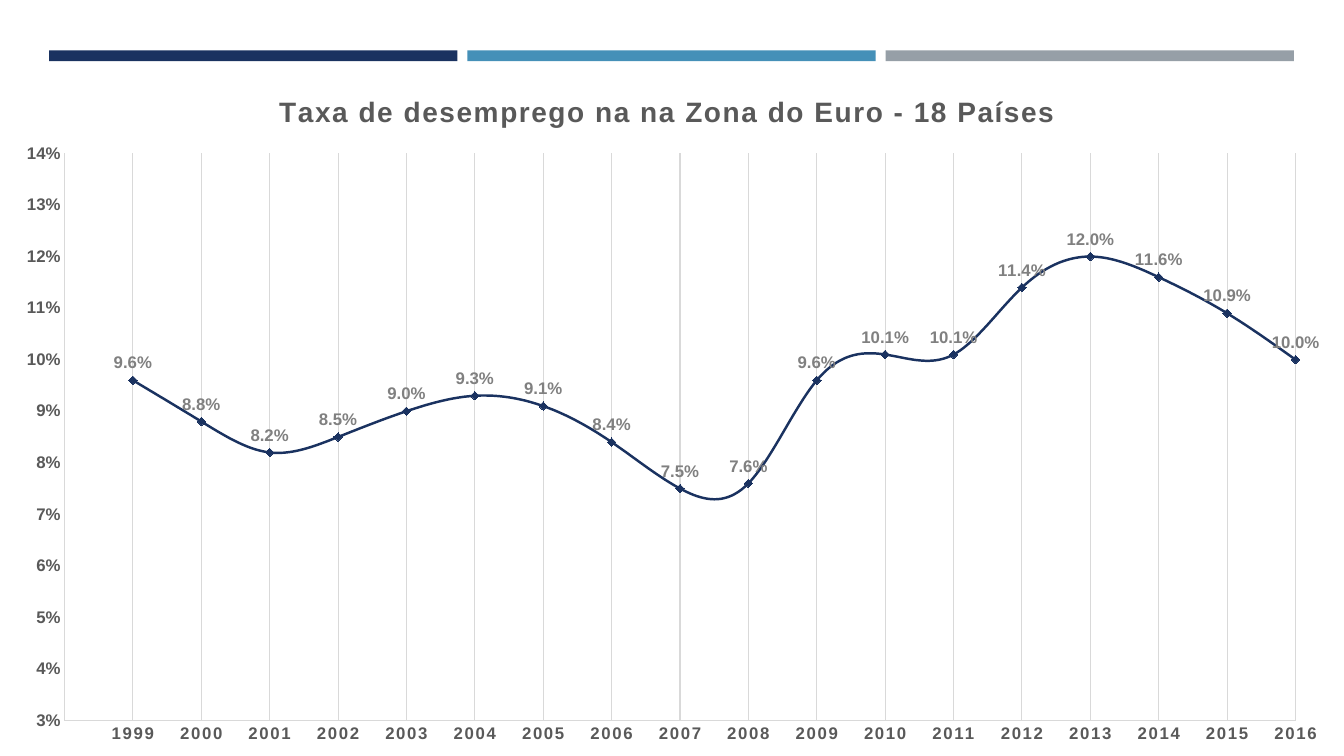
"""Build a slide with a line chart of euro area unemployment."""
from lxml import etree
from pptx import Presentation
from pptx.chart.data import CategoryChartData
from pptx.dml.color import RGBColor
from pptx.enum.chart import (XL_CHART_TYPE, XL_LABEL_POSITION,
                             XL_MARKER_STYLE, XL_TICK_MARK)
from pptx.enum.shapes import MSO_SHAPE
from pptx.oxml.ns import qn
from pptx.util import Cm, Pt

LINE = XL_CHART_TYPE.LINE_MARKERS
ABOVE = XL_LABEL_POSITION.ABOVE
DIAMOND = XL_MARKER_STYLE.DIAMOND
NO_TICK = XL_TICK_MARK.NONE
RECT = MSO_SHAPE.RECTANGLE

TITLE = "Taxa de desemprego na na Zona do Euro - 18 Países"
YEARS = [""] + [str(year) for year in range(1999, 2017)]
RATES = [None, 0.096, 0.088, 0.082, 0.085, 0.09, 0.093, 0.091, 0.084, 0.075,
         0.076, 0.096, 0.101, 0.101, 0.114, 0.12, 0.116, 0.109, 0.1]
COLORS = {"navy": "1A3260", "blue": "4590B8", "steel": "969FA7",
          "text": "595959", "label": "808080", "grid": "D9D9D9"}
BARS = ["navy", "blue", "steel"]
WIDE, HIGH = 33.87, 19.05
BAR_LEFT, BAR_TOP, BAR_WIDE, BAR_HIGH, BAR_STEP = 1.24, 1.27, 10.29, 0.27, 10.54
CHART_TOP = 1.6
PLOT = {"x": 0.048, "y": 0.13, "w": 0.916, "h": 0.819}
HEAD = {"x": 0.204, "y": 0.036}


def rgb(name):
    return RGBColor.from_string(COLORS[name])


def style(font, size, color):
    font.name, font.size, font.bold = "Arial", Pt(size), True
    font.color.rgb = rgb(color)


def stroke(line, color, width):
    line.color.rgb = rgb(color)
    line.width = Pt(width)


def place(parent, index, box, inner=False):
    for old in parent.findall(qn("c:layout")):
        parent.remove(old)
    layout = etree.Element(qn("c:layout"))
    manual = etree.SubElement(layout, qn("c:manualLayout"))
    if inner:
        etree.SubElement(manual, qn("c:layoutTarget")).set("val", "inner")
    for key in ("x", "y"):
        etree.SubElement(manual, qn(f"c:{key}Mode")).set("val", "edge")
    for key, value in box.items():
        etree.SubElement(manual, qn(f"c:{key}")).set("val", str(value))
    parent.insert(index, layout)


def add_bars(slide):
    for i, color in enumerate(BARS):
        bar = slide.shapes.add_shape(RECT, Cm(BAR_LEFT + i * BAR_STEP), Cm(BAR_TOP),
                                     Cm(BAR_WIDE), Cm(BAR_HIGH))
        bar.shadow.inherit = False
        bar.fill.solid()
        bar.fill.fore_color.rgb = rgb(color)
        bar.line.fill.background()


def set_title(chart):
    chart.has_title = True
    title = chart.chart_title
    title.include_in_layout = False
    run = title.text_frame.paragraphs[0].add_run()
    run.text = TITLE
    style(run.font, 20, "text")
    run.font._element.set("spc", "100")
    place(title._element, 1, HEAD)


def set_axes(chart):
    years, rates = chart.category_axis, chart.value_axis
    for axis in (years, rates):
        axis.major_tick_mark = axis.minor_tick_mark = NO_TICK
        style(axis.tick_labels.font, 12, "text")
        stroke(axis.format.line, "grid", 0.75)
    years.tick_labels.font._element.set("spc", "120")
    years.has_major_gridlines = True
    stroke(years.major_gridlines.format.line, "grid", 0.75)
    rates.has_major_gridlines = False
    rates.minimum_scale, rates.maximum_scale = 0.03, 0.14
    rates.major_unit = 0.01
    rates.tick_labels.number_format = "0%"
    rates.tick_labels.number_format_is_linked = False
    cross = etree.Element(qn("c:crossBetween"), val="midCat")
    rates._element.find(qn("c:majorUnit")).addprevious(cross)


def set_series(plot):
    plot.vary_by_categories = False
    rate = plot.series[0]
    rate.smooth = True
    stroke(rate.format.line, "navy", 1.75)
    mark = rate.marker
    mark.style, mark.size = DIAMOND, 6
    mark.format.fill.solid()
    mark.format.fill.fore_color.rgb = rgb("navy")
    stroke(mark.format.line, "navy", 0.75)
    labels = rate.data_labels
    labels.show_value = True
    labels.position = ABOVE
    labels.number_format = "0.0%"
    labels.number_format_is_linked = False
    style(labels.font, 12, "label")


def add_graph(slide):
    data = CategoryChartData(number_format="0.0%")
    data.categories = YEARS
    data.add_series(TITLE, RATES)
    frame = slide.shapes.add_chart(LINE, Cm(0), Cm(CHART_TOP), Cm(WIDE),
                                   Cm(HIGH - CHART_TOP), data)
    chart = frame.chart
    chart.has_legend = False
    chart.font.name, chart.font.size = "Arial", Pt(12)
    set_title(chart)
    set_axes(chart)
    set_series(chart.plots[0])
    place(chart._chartSpace.find(".//" + qn("c:plotArea")), 0, PLOT, True)


def main():
    deck = Presentation()
    deck.slide_width, deck.slide_height = Cm(WIDE), Cm(HIGH)
    slide = deck.slides.add_slide(deck.slide_layouts[6])
    add_bars(slide)
    add_graph(slide)
    deck.save("out.pptx")


if __name__ == "__main__":
    main()
